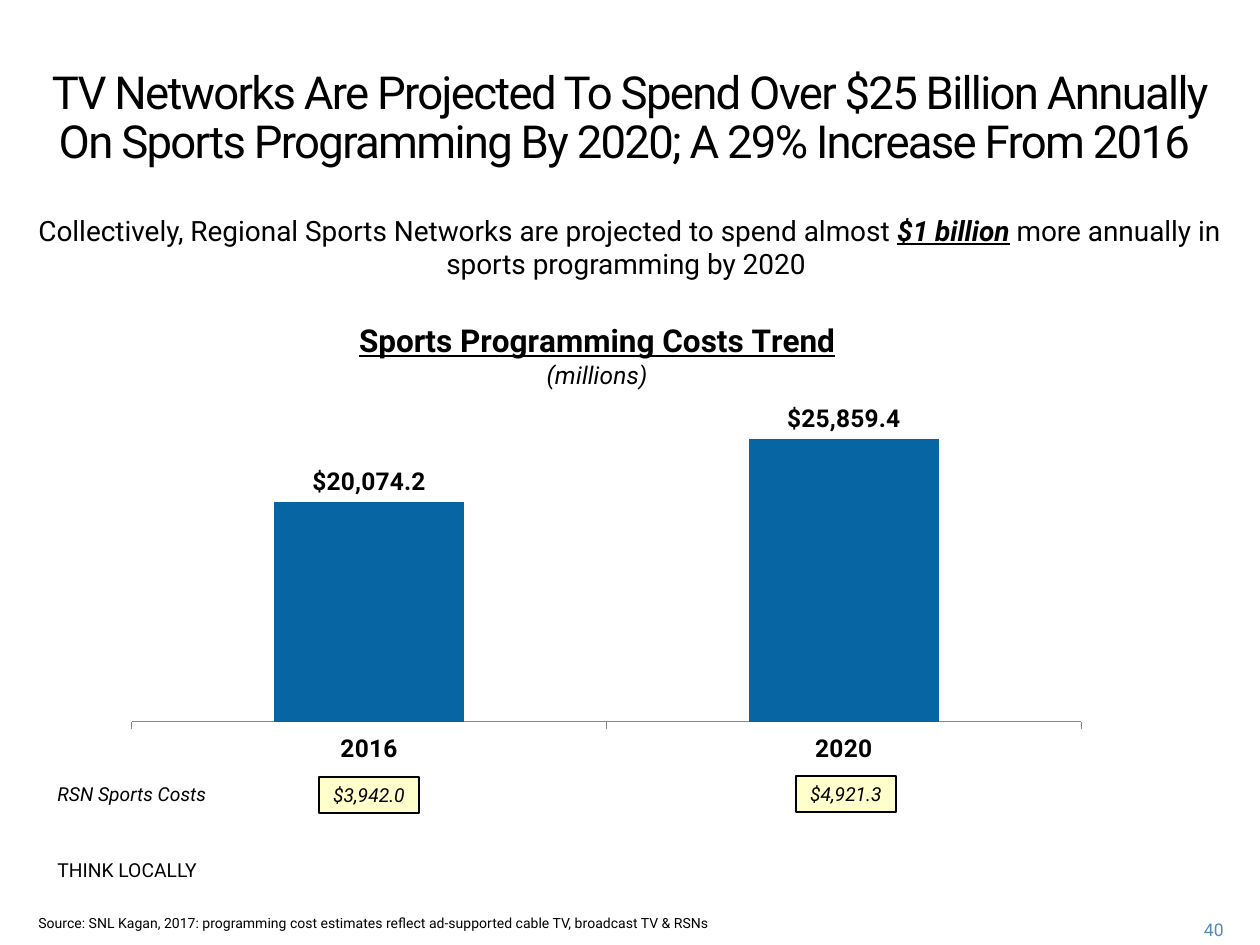
from lxml import etree
from pptx import Presentation
from pptx.chart.data import CategoryChartData
from pptx.dml.color import RGBColor
from pptx.enum.chart import XL_CHART_TYPE as ChartType, XL_LABEL_POSITION as LabelPos
from pptx.enum.chart import XL_TICK_MARK as Tick
from pptx.enum.shapes import MSO_SHAPE as Preset
from pptx.enum.text import MSO_ANCHOR as Anchor, PP_ALIGN as Align
from pptx.oxml.ns import qn
from pptx.util import Pt

PX = 914400 / 126
FONT = "Roboto"
BLACK = RGBColor(0x00, 0x00, 0x00)
BAR_BLUE = RGBColor(0x07, 0x65, 0xA3)
PAGE_BLUE = RGBColor(0x50, 0x8A, 0xBA)
PALE_YELLOW = RGBColor(0xFF, 0xFF, 0xCC)
AXIS_GRAY = RGBColor(0x86, 0x86, 0x86)


def write(shape, text, size, color=BLACK, align=Align.LEFT, italic=False):
    frame = shape.text_frame
    frame.word_wrap = True
    frame.vertical_anchor = Anchor.TOP
    paragraph = frame.paragraphs[0]
    paragraph.alignment = align
    paragraph.font.name = FONT
    paragraph.font.size = Pt(size)
    paragraph.font.color.rgb = color
    paragraph.font.italic = italic
    paragraph.add_run().text = text
    return paragraph


def place(parent, index, **fractions):
    for old in parent.findall(qn("c:layout")):
        parent.remove(old)
    layout = etree.Element(qn("c:layout"))
    manual = etree.SubElement(layout, qn("c:manualLayout"))
    for tag, value in fractions.items():
        etree.SubElement(manual, qn("c:" + tag)).set("val", str(value))
    parent.insert(index, layout)


prs = Presentation()
prs.slide_width = int(1260 * PX)
prs.slide_height = int(945 * PX)
slide = prs.slides.add_slide(prs.slide_layouts[6])
shapes = slide.shapes

data = CategoryChartData(number_format='"$"#,##0.0')
data.categories = ["2016", "2020"]
data.add_series("Series 1", [20074.2, 25859.4])
chart = shapes.add_chart(ChartType.COLUMN_CLUSTERED, int(112 * PX), int(287 * PX),
                         int(989 * PX), int(486 * PX), data).chart
chart.font.name = FONT
chart.font.size = Pt(11)
chart.font.color.rgb = BLACK
chart.has_legend = False

heading = chart.chart_title.text_frame
heading.text = "Sports Programming Costs Trend\n(millions)"
for line, size, main in zip(heading.paragraphs, (18, 14), (True, False)):
    line.font.name = FONT
    line.font.size = Pt(size)
    line.font.color.rgb = BLACK
    line.font.bold = line.font.underline = main
    line.font.italic = not main
chart.chart_title.include_in_layout = False
place(chart.chart_title._element, 1, xMode="edge", yMode="edge", x=0.246, y=0.063)
place(chart._chartSpace.chart.plotArea, 0, layoutTarget="inner", xMode="edge",
      yMode="edge", x=0.02, y=0.22, w=0.96, h=0.675)

costs = chart.value_axis
costs.visible = False
costs.has_major_gridlines = False
costs.minimum_scale = 0
costs.maximum_scale = 30000
years = chart.category_axis
years.major_tick_mark = Tick.OUTSIDE
years.format.line.color.rgb = AXIS_GRAY
years.tick_labels.font.size = Pt(14)
years.tick_labels.font.bold = True

plot = chart.plots[0]
plot.gap_width = 150
plot.overlap = 100
plot.vary_by_categories = False
bars = plot.series[0]
bars.format.fill.solid()
bars.format.fill.fore_color.rgb = BAR_BLUE
amounts = bars.data_labels
amounts.show_value = True
amounts.position = LabelPos.OUTSIDE_END
amounts.font.name = FONT
amounts.font.size = Pt(14)
amounts.font.bold = True
amounts.font.color.rgb = BLACK

title = write(shapes.add_textbox(int(24 * PX), int(63 * PX), int(1211 * PX), int(86 * PX)),
              "TV Networks Are Projected To Spend Over $25 Billion Annually "
              "On Sports Programming By 2020; A 29% Increase From 2016 ",
              26, align=Align.CENTER)
title.line_spacing = Pt(28)
title.runs[0].font._element.set("spc", "-100")

summary = write(shapes.add_textbox(int(24 * PX), int(207 * PX), int(1211 * PX), int(81 * PX)),
                "Collectively, Regional Sports Networks are projected to spend almost ",
                16, align=Align.CENTER)
increase = summary.add_run()
increase.text = "$1 billion"
increase.font.bold = increase.font.italic = increase.font.underline = True
summary.add_run().text = " more annually in sports programming by 2020 "

for text, left, top, width, height, size, color, align, italic in (
    ("RSN Sports Costs", 45, 776, 193, 37, 11, BLACK, Align.LEFT, True),
    ("THINK LOCALLY", 45, 852, 237, 59, 11, BLACK, Align.LEFT, False),
    ("Source: SNL Kagan, 2017: programming cost estimates reflect "
     "ad-supported cable TV, broadcast TV & RSNs",
     26, 908, 934, 33, 8, BLACK, Align.LEFT, False),
    ("40", 1159, 913, 77, 31, 10, PAGE_BLUE, Align.RIGHT, False),
):
    box = shapes.add_textbox(*(int(n * PX) for n in (left, top, width, height)))
    write(box, text, size, color, align, italic)

for cost, left, top in (("$3,942.0", 319, 777), ("$4,921.3", 796, 776)):
    tag = shapes.add_shape(Preset.RECTANGLE,
                           *(int(n * PX) for n in (left, top, 100, 36)))
    tag.shadow.inherit = False
    tag.fill.solid()
    tag.fill.fore_color.rgb = PALE_YELLOW
    tag.line.color.rgb = BLACK
    tag.line.width = Pt(0.75)
    write(tag, cost, 11, align=Align.CENTER, italic=True)

prs.save("out.pptx")
